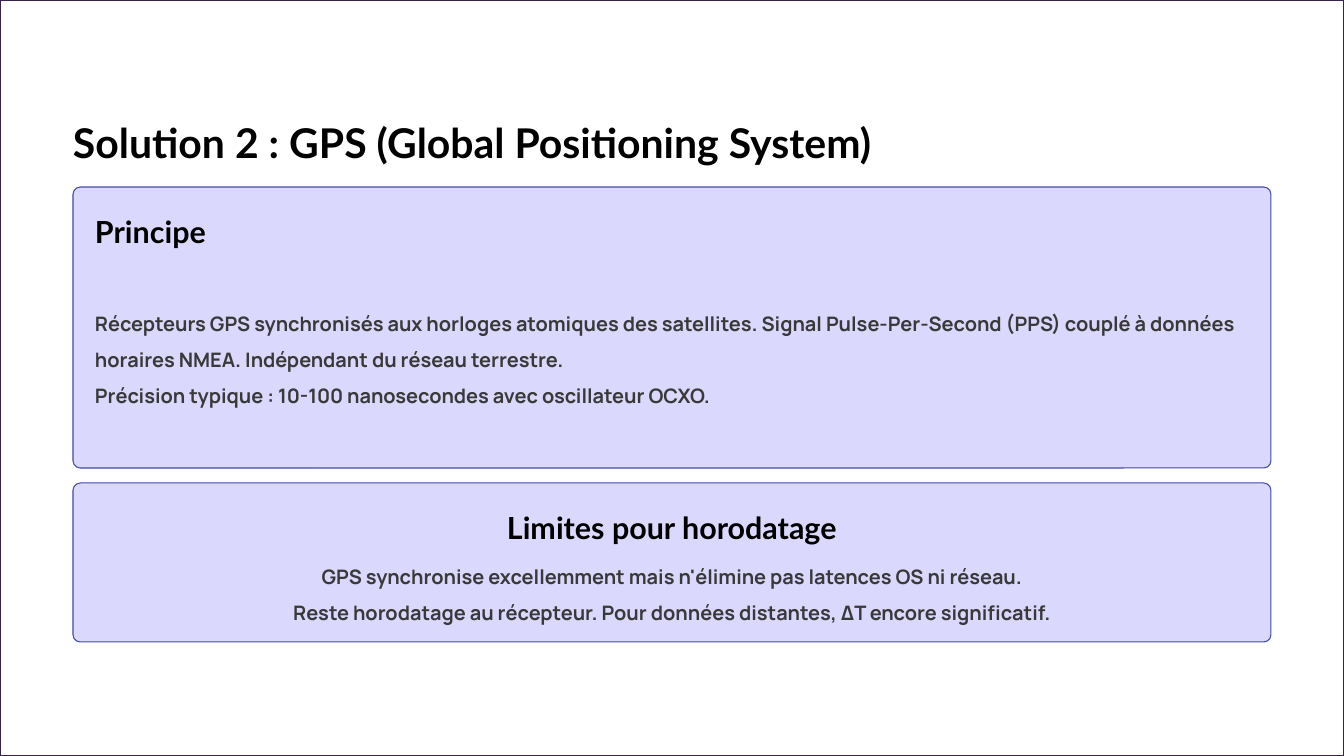
from lxml import etree
from pptx import Presentation
from pptx import util as u
from pptx.dml.color import RGBColor
from pptx.enum import shapes, text
from pptx.oxml import ns

TITLE = "Solution 2 : GPS (Global Positioning System)"
CARDS = [
    {
        "head": "Principe",
        "body": [
            "Récepteurs GPS synchronisés aux horloges atomiques des satellites. "
            "Signal Pulse-Per-Second (PPS) couplé à données horaires NMEA. "
            "Indépendant du réseau terrestre.",
            "Précision typique : 10-100 nanosecondes avec oscillateur OCXO.",
        ],
        "high": 281,
        "align": text.PP_ALIGN.LEFT,
    },
    {
        "head": "Limites pour horodatage",
        "body": [
            "GPS synchronise excellemment mais n'élimine pas latences OS ni réseau.",
            "Reste horodatage au récepteur. Pour données distantes, ΔT encore significatif.",
        ],
        "high": 159,
        "align": text.PP_ALIGN.CENTER,
    },
]
HEX = {"page": "FFFFFF", "frame": "382350", "card": "DAD8FD",
       "edge": "424AA1", "head": "000000", "body": "393939"}
FONTS = {
    "title": {"name": "Lato", "size": u.Pt(39), "bold": True},
    "head": {"name": "Lato", "size": u.Pt(29), "bold": True},
    "body": {"name": "Manrope", "size": u.Pt(19), "bold": True},
}
WIDE, TALL = 1344, 756
SIDE, TOP, GAP = 73, 187, 15
PAD, ROW = 22, 37
ROUND = 7.3
SPAN = WIDE - 2 * SIDE


def px(*sizes):
    return [round(size * 12095.24) for size in sizes]


def color(key):
    return RGBColor.from_string(HEX[key])


def add_box(slide, kind, place, fill, edge, width):
    box = slide.shapes.add_shape(kind, *px(*place))
    box.shadow.inherit = False
    box.fill.solid()
    box.fill.fore_color.rgb = color(fill)
    box.line.color.rgb = color(edge)
    box.line.width = u.Pt(width)
    return box


def add_text(slide, place, lines, style, tint, space, align):
    frame = slide.shapes.add_textbox(*px(*place)).text_frame
    form = {"word_wrap": True, "vertical_anchor": text.MSO_ANCHOR.MIDDLE,
            "margin_left": 0, "margin_right": 0, "margin_top": 0, "margin_bottom": 0}
    for key, value in form.items():
        setattr(frame, key, value)
    for i, line in enumerate(lines):
        para = frame.add_paragraph() if i else frame.paragraphs[0]
        para.alignment = align
        para.line_spacing = space
        run = para.add_run()
        run.text = line
        run.font.color.rgb = color(tint)
        for key, value in FONTS[style].items():
            setattr(run.font, key, value)


def main():
    deck = Presentation()
    deck.slide_width, deck.slide_height = px(WIDE, TALL)
    slide = deck.slides.add_slide(deck.slide_layouts[6])

    kinds = shapes.MSO_SHAPE
    page = add_box(slide, kinds.RECTANGLE, (0, 0, WIDE, TALL), "page", "frame", 2)
    tint = page.fill._xPr.find(ns.qn("a:solidFill"))[0]
    etree.SubElement(tint, ns.qn("a:alpha"), val="80000")

    add_text(slide, (SIDE, 113, SPAN, 49), [TITLE], "title", "head", 1.2,
             text.PP_ALIGN.LEFT)
    top = TOP
    for card in CARDS:
        high = card["high"]
        box = add_box(slide, kinds.ROUNDED_RECTANGLE, (SIDE, top, SPAN, high),
                      "card", "edge", 1)
        box.adjustments[0] = ROUND / high
        left, wide = SIDE + PAD, SPAN - 2 * PAD
        add_text(slide, (left, top + PAD, wide, ROW), [card["head"]],
                 "head", "head", 1.2, card["align"])
        skip = PAD + ROW + GAP
        add_text(slide, (left, top + skip, wide, high - skip - PAD), card["body"],
                 "body", "body", 1.5, card["align"])
        top += high + GAP
    deck.save("out.pptx")


if __name__ == "__main__":
    main()
